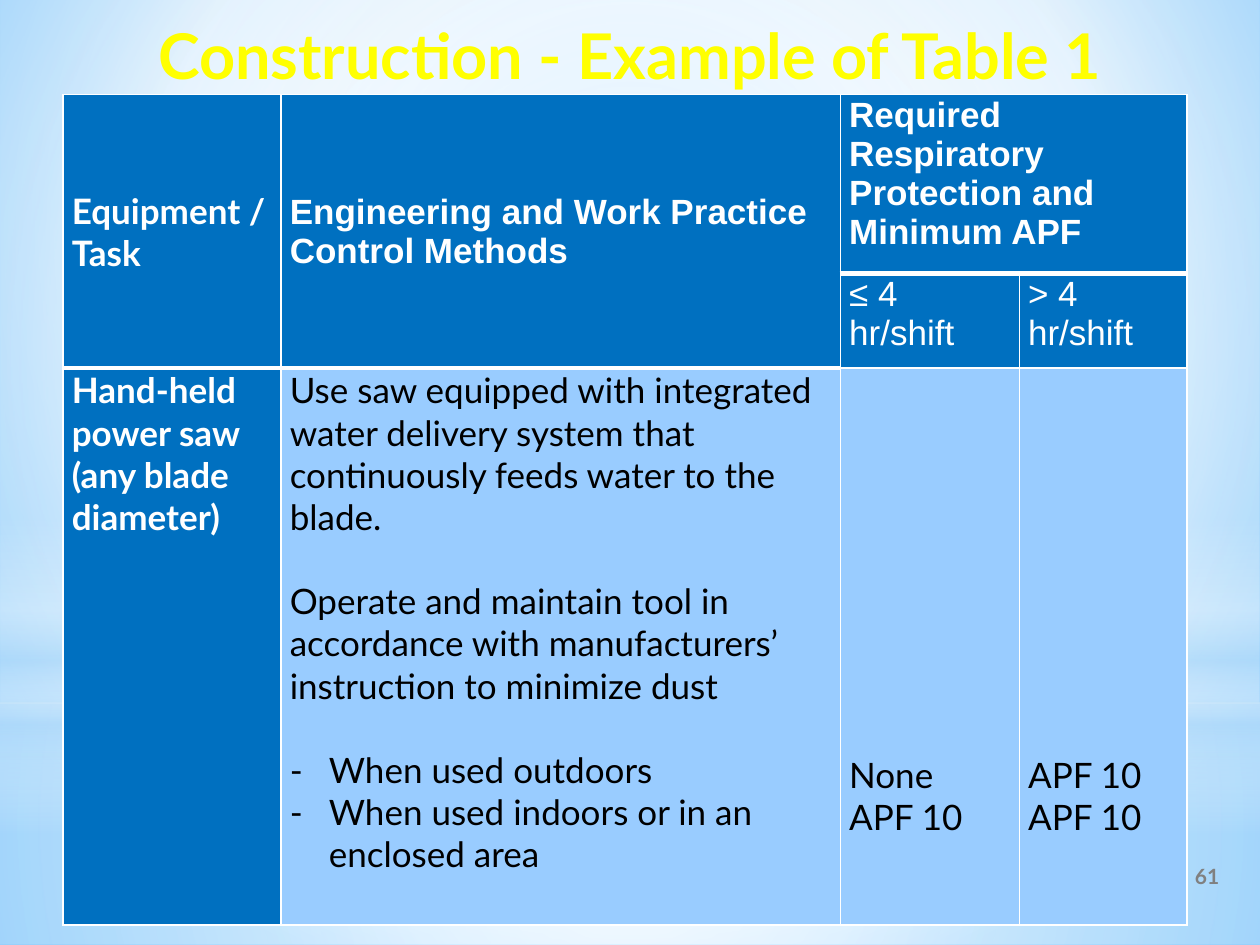
from lxml import etree
from pptx import Presentation
from pptx import util as u
from pptx.dml.color import RGBColor
from pptx.enum import shapes, text
from pptx.oxml.ns import qn

YELLOW = RGBColor(0xFF, 0xFF, 0x00)
WHITE = RGBColor(0xFF, 0xFF, 0xFF)
BLACK = RGBColor(0x00, 0x00, 0x00)
GRAY = RGBColor(0x80, 0x80, 0x80)
INDIGO = RGBColor(0x4E, 0x67, 0xC8)
BLUE = RGBColor(0x00, 0x70, 0xC0)
PALE_BLUE = RGBColor(0x99, 0xCC, 0xFF)
SKY = RGBColor(0x9E, 0xD5, 0xFF)
DEEP_SKY = RGBColor(0x5B, 0xB9, 0xFF)
HAZE = RGBColor(0xB4, 0xDC, 0xFA)


def set_gradient(owner, stops, focus=None):
    grad = owner.find(".//" + qn("a:gradFill"))
    for child in list(grad):
        grad.remove(child)
    stop_list = etree.SubElement(grad, qn("a:gsLst"))
    for position, color, opacity in stops:
        stop = etree.SubElement(stop_list, qn("a:gs"), pos=str(position * 1000))
        tint = etree.SubElement(stop, qn("a:srgbClr"), val=str(color))
        if opacity < 100:
            etree.SubElement(tint, qn("a:alpha"), val=str(opacity * 1000))
    if focus:
        circle = etree.SubElement(grad, qn("a:path"), path="circle")
        sides = {side: str(share * 1000) for side, share in zip("ltrb", focus)}
        etree.SubElement(circle, qn("a:fillToRect"), **sides)
    else:
        etree.SubElement(grad, qn("a:lin"), ang="5400000", scaled="0")


def add_line(parent, tag, color, points):
    line = etree.SubElement(parent, qn(tag), w=str(int(u.Pt(points))))
    fill = etree.SubElement(line, qn("a:solidFill"))
    etree.SubElement(fill, qn("a:srgbClr"), val=str(color))
    return line


prs = Presentation()
prs.slide_width, prs.slide_height = u.Inches(10), u.Inches(7.5)
slide = prs.slides.add_slide(prs.slide_layouts[5])

slide.background.fill.gradient()
set_gradient(slide._element, [(0, SKY, 100), (60, WHITE, 100), (100, DEEP_SKY, 100)],
             (20, 10, 20, 60))

RECT, OVAL = shapes.MSO_SHAPE.RECTANGLE, shapes.MSO_SHAPE.OVAL
CENTER = (50, 50, 50, 50)
glows = [
    (RECT, 5.58, 1.92, [(0, WHITE, 91), (37, WHITE, 76), (100, HAZE, 79)], CENTER),
    (RECT, 0, 5.58, [(0, WHITE, 89), (48, WHITE, 62), (100, HAZE, 79)], CENTER),
    (RECT, 4.12, 2.5, [(0, WHITE, 0), (29, WHITE, 30), (45, HAZE, 40),
                       (55, WHITE, 26), (65, HAZE, 60), (100, WHITE, 0)], None),
    (OVAL, 1.75, 5.58, [(0, WHITE, 100), (56, WHITE, 0)], CENTER),
]
for outline, top, height, stops, focus in glows:
    glow = slide.shapes.add_shape(outline, 0, u.Inches(top), u.Inches(10), u.Inches(height))
    glow.shadow.inherit = False
    glow.line.fill.background()
    glow.fill.gradient()
    set_gradient(glow._element, stops, focus)

title = slide.shapes.title
title.left, title.top = u.Inches(0.5), u.Inches(0.08)
title.width, title.height = u.Inches(9), u.Inches(0.75)
slide.shapes._spTree.append(title._element)
heading = title.text_frame
heading.text = "Construction - Example of Table 1"
heading.vertical_anchor = text.MSO_ANCHOR.TOP
heading.auto_size = text.MSO_AUTO_SIZE.NONE
heading.paragraphs[0].alignment = text.PP_ALIGN.CENTER
heading_run = heading.paragraphs[0].runs[0]
heading_run.font.size, heading_run.font.bold = u.Pt(36), True
heading_run.font.name = "Lato"
heading_run.font.color.rgb = YELLOW
heading_props = heading_run.font._element
heading_props.insert(0, add_line(heading_props, "a:ln", INDIGO, 0.75))

controls = slide.shapes.add_table(3, 4, u.Inches(0.5), u.Inches(0.75),
                                  u.Inches(8.92), u.Inches(6.59)).table
controls.first_row = controls.horz_banding = False
for column, width in zip(controls.columns, (1.73, 4.44, 1.42, 1.33)):
    column.width = u.Inches(width)
for row, height in zip(controls.rows, (1.42, 0.75, 4.42)):
    row.height = u.Inches(height)
for first, last in [((0, 0), (1, 0)), ((0, 1), (1, 1)), ((0, 2), (0, 3))]:
    controls.cell(*first).merge(controls.cell(*last))

TOP, MIDDLE, BOTTOM = text.MSO_ANCHOR.TOP, text.MSO_ANCHOR.MIDDLE, text.MSO_ANCHOR.BOTTOM
entries = {
    (0, 0): (["Equipment / Task"], "Lato", True, MIDDLE),
    (0, 1): (["Engineering and Work Practice Control Methods"], "Arial", True, MIDDLE),
    (0, 2): (["Required Respiratory Protection and", "Minimum APF"], "Arial", True, TOP),
    (1, 2): (["≤ 4 hr/shift"], "Arial", False, TOP),
    (1, 3): (["> 4 hr/shift"], "Arial", False, TOP),
    (2, 0): (["Hand-held power saw", "(any blade diameter)"], "Lato", True, TOP),
    (2, 1): (["Use saw equipped with integrated water delivery system that "
              "continuously feeds water to the blade.",
              "Operate and maintain tool in accordance with manufacturers’ "
              "instruction to minimize dust",
              "When used outdoors",
              "When used indoors or in an enclosed area"], "Lato", False, TOP),
    (2, 2): (["None", "APF 10"], "Lato", False, BOTTOM),
    (2, 3): (["APF 10", "APF 10"], "Lato", False, BOTTOM),
}
for (row, col), (lines, face, bold, anchor) in entries.items():
    cell = controls.cell(row, col)
    cell.margin_left = cell.margin_right = u.Inches(0.07)
    cell.margin_top = u.Inches(0.01)
    cell.margin_bottom = u.Inches(0.69 if anchor == BOTTOM else 0)
    cell.vertical_anchor = anchor
    cell.text_frame.text = "\n".join(lines)
    for paragraph in cell.text_frame.paragraphs:
        font = paragraph.runs[0].font
        font.size, font.name, font.bold = u.Pt(20), face, bold
        font.color.rgb = BLACK if row == 2 and col > 0 else WHITE

methods = controls.cell(2, 1).text_frame.paragraphs
for paragraph in methods[2:]:
    props = paragraph._p.get_or_add_pPr()
    props.set("marL", str(int(u.Inches(0.31))))
    props.set("indent", str(int(u.Inches(-0.31))))
    etree.SubElement(props, qn("a:buFont"), typeface="Lato")
    etree.SubElement(props, qn("a:buChar"), char="-")
for paragraph in methods[1:3]:
    paragraph.space_before = u.Pt(24)

for row in range(3):
    for col in range(4):
        cell = controls.cell(row, col)
        props = cell._tc.get_or_add_tcPr()
        above = 3 if (row == 1 and col > 1) or (row == 2 and col < 2) else 1
        below = 3 if row == 0 or (row == 1 and col < 2) else 1
        for side, points in zip("LRTB", (1, 1, above, below)):
            add_line(props, "a:ln" + side, WHITE, points)
        cell.fill.solid()
        cell.fill.fore_color.rgb = PALE_BLUE if row == 2 and col > 0 else BLUE

page_number = slide.shapes.add_textbox(u.Inches(8.58), u.Inches(6.75),
                                       u.Inches(2), u.Inches(0.4)).text_frame
page_number.word_wrap = True
page_number.vertical_anchor = MIDDLE
page_number.text = "61"
page_number.paragraphs[0].alignment = text.PP_ALIGN.CENTER
number_font = page_number.paragraphs[0].runs[0].font
number_font.size, number_font.name, number_font.bold = u.Pt(12), "Lato", True
number_font.color.rgb = GRAY

prs.save("out.pptx")
